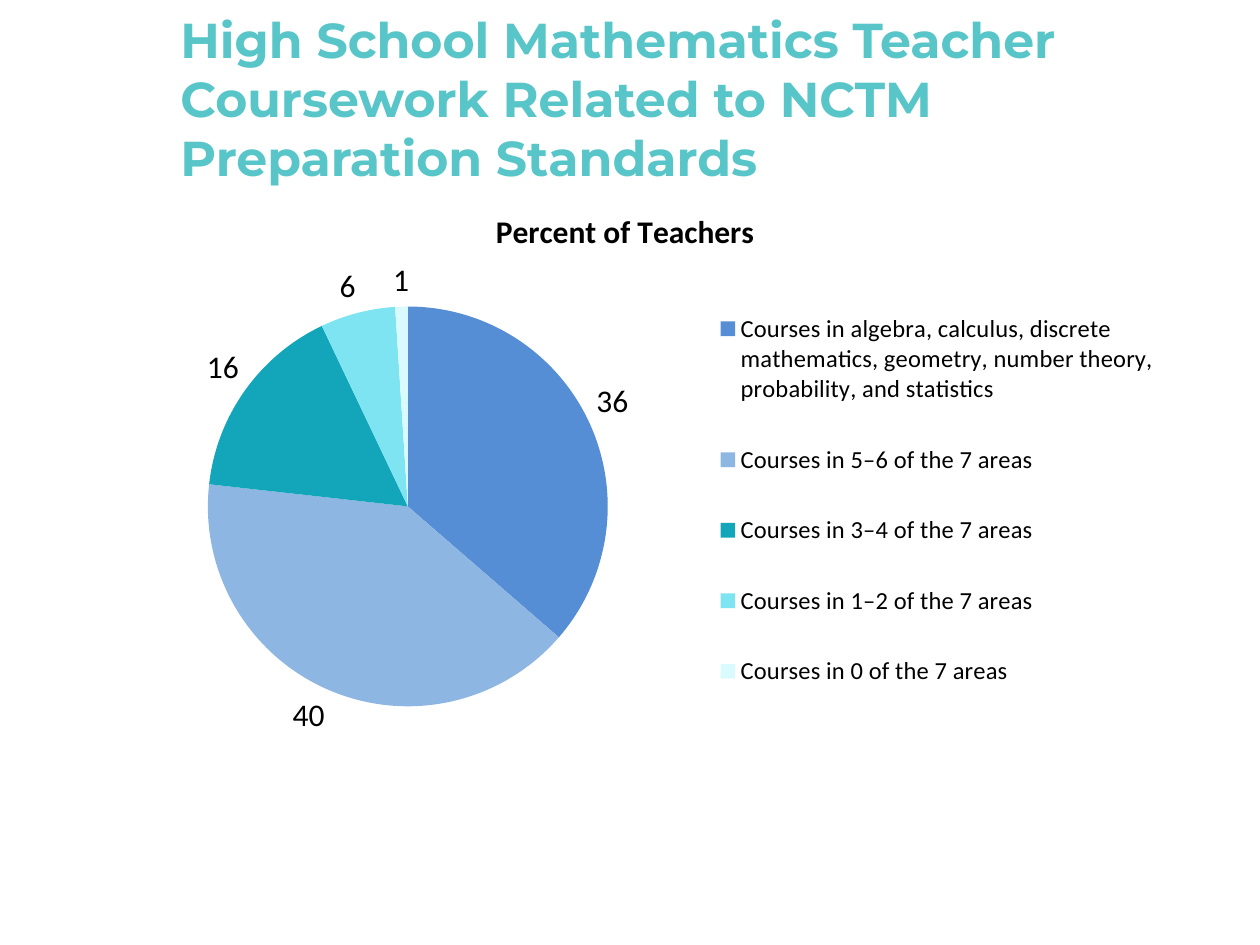
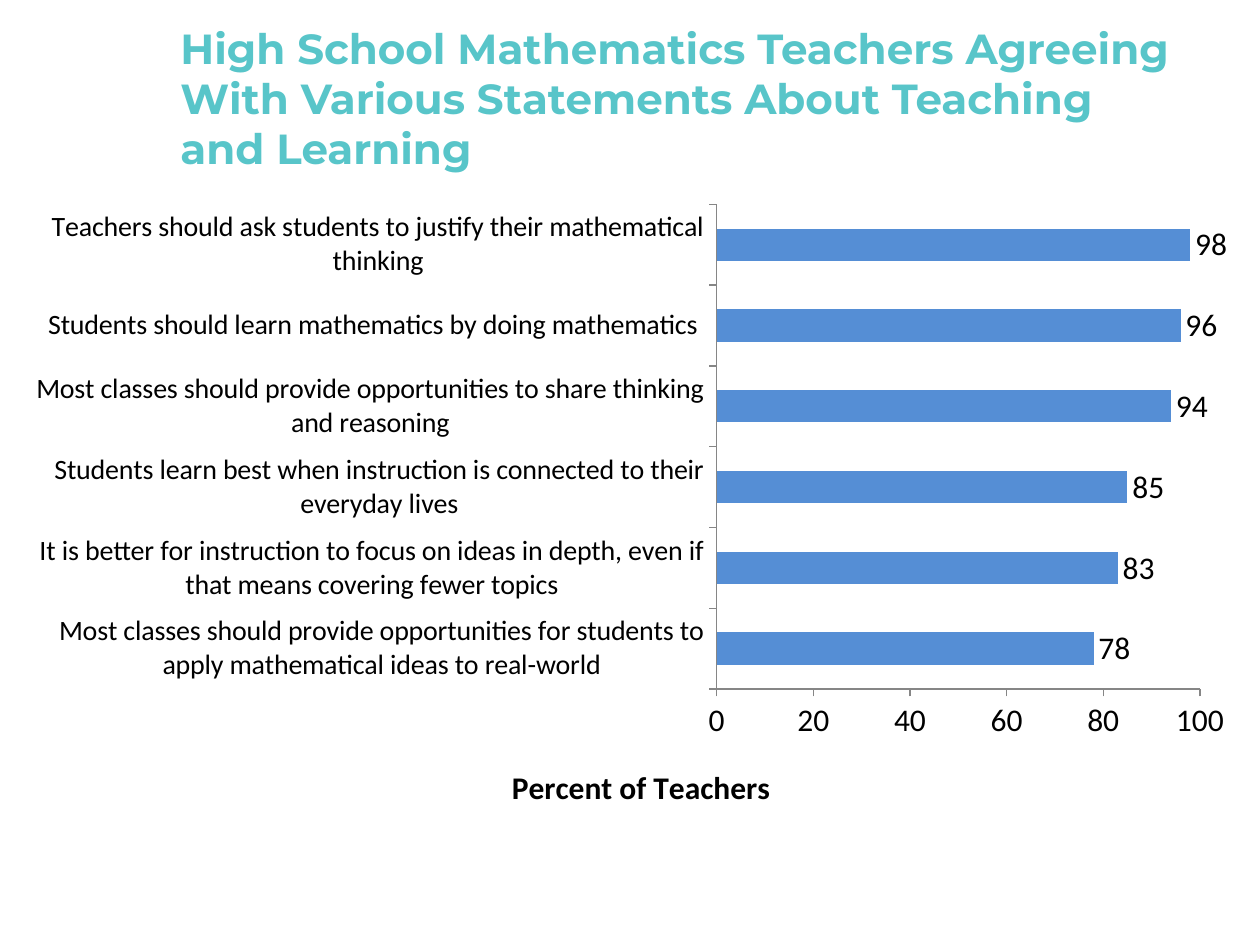
from dataclasses import dataclass

from pptx import Presentation
from pptx.chart.data import CategoryChartData
from pptx.dml.color import RGBColor
from pptx.enum import chart as charts, text
from pptx.oxml.ns import qn
from pptx.oxml.xmlchemy import OxmlElement
from pptx.util import Pt


@dataclass(frozen=True)
class Theme:
    title_font: str = "Montserrat"
    chart_font: str = "Calibri"
    title: str = "58C5C9"
    ink: str = "000000"
    axis: str = "868686"
    series: tuple = ("558ED5", "8EB6E3", "13A6BA", "7FE4F2", "D9FBFF")
    chart_size: int = 18
    category_size: int = 16
    legend_size: int = 14


def set_font(font, name, size, color, bold=False):
    font.name, font.size, font.bold = name, Pt(size), bold
    font.color.rgb = RGBColor.from_string(color)


def set_fill(fill, color):
    fill.solid()
    fill.fore_color.rgb = RGBColor.from_string(color)


def place(chart, tag, x, y, w=None, h=None):
    """Give a chart part a manual layout, in fractions of the chart."""
    part = next(chart._chartSpace.iter(qn(tag)))
    for old in part.findall(qn("c:layout")):
        part.remove(old)
    layout, manual = OxmlElement("c:layout"), OxmlElement("c:manualLayout")
    layout.append(manual)
    settings = [("xMode", "edge"), ("yMode", "edge"), ("x", x), ("y", y), ("w", w), ("h", h)]
    if tag == "c:plotArea":
        settings.insert(0, ("layoutTarget", "inner"))
    for name, value in settings:
        if value is not None:
            item = OxmlElement(f"c:{name}")
            item.set("val", str(value))
            manual.append(item)
    part.insert(0 if tag == "c:plotArea" else 1, layout)


class Deck:
    def __init__(self, theme):
        self.theme = theme
        self.prs = Presentation()
        self.prs.slide_width, self.prs.slide_height = Pt(720), Pt(540)
        self.s = None

    def slide(self, title, size):
        self.s = self.prs.slides.add_slide(self.prs.slide_layouts[6])
        tf = self.s.shapes.add_textbox(Pt(96), Pt(21.6), Pt(588), Pt(68.4)).text_frame
        tf.word_wrap = True
        tf.vertical_anchor = text.MSO_ANCHOR.MIDDLE
        tf.text = title
        set_font(tf.paragraphs[0].runs[0].font, self.theme.title_font, size, self.theme.title, True)

    def chart(self, kind, box, values):
        """Add a chart with value labels from a dict of category to value."""
        data = CategoryChartData()
        data.categories = list(values)
        data.add_series("Series 1", list(values.values()))
        chart = self.s.shapes.add_chart(kind, *map(Pt, box), data).chart
        self.chart_text(chart.font)
        chart.has_title = chart.has_legend = False
        plot = chart.plots[0]
        plot.has_data_labels = True
        labels = plot.data_labels
        labels.show_value = True
        labels.position = charts.XL_LABEL_POSITION.OUTSIDE_END
        self.chart_text(labels.font)
        return chart

    def chart_text(self, font, size=None, bold=False):
        t = self.theme
        set_font(font, t.chart_font, size or t.chart_size, t.ink, bold)

    def heading(self, chart, owner, words, x, y):
        """Title a chart or an axis at a fixed place in the chart."""
        owner.has_title = True
        title = owner.chart_title if owner is chart else owner.axis_title
        tf = title.text_frame
        tf.text = words
        self.chart_text(tf.paragraphs[0].runs[0].font, bold=True)
        place(chart, "c:title", x, y)

    def pie(self, box, values, heading):
        chart = self.chart(charts.XL_CHART_TYPE.PIE, box, values)
        self.heading(chart, chart, heading, 0.39, 0.04)
        chart.plots[0].vary_by_categories = True
        for i, color in enumerate(self.theme.series):
            set_fill(chart.series[0].points[i].format.fill, color)
        chart.has_legend = True
        chart.legend.position = charts.XL_LEGEND_POSITION.RIGHT
        chart.legend.include_in_layout = False
        self.chart_text(chart.legend.font, self.theme.legend_size)
        place(chart, "c:legend", 0.57, 0.15, 0.4, 0.72)
        place(chart, "c:plotArea", 0.15, 0.17, 0.34, 0.7)

    def bars(self, box, values, heading):
        chart = self.chart(charts.XL_CHART_TYPE.BAR_CLUSTERED, box, values)
        chart.plots[0].gap_width = 150
        chart.plots[0].vary_by_categories = False
        set_fill(chart.series[0].format.fill, self.theme.series[0])
        category, value = chart.category_axis, chart.value_axis
        for axis, size in ((category, self.theme.category_size), (value, self.theme.chart_size)):
            axis.has_major_gridlines = False
            axis.major_tick_mark = charts.XL_TICK_MARK.OUTSIDE
            axis.format.line.color.rgb = RGBColor.from_string(self.theme.axis)
            axis.format.line.width = Pt(0.75)
            self.chart_text(axis.tick_labels.font, size)
        value.minimum_scale, value.maximum_scale, value.major_unit = 0, 100, 20
        self.heading(chart, value, heading, 0.4, 0.89)
        place(chart, "c:plotArea", 0.57, 0.02, 0.39, 0.76)


def main():
    deck = Deck(Theme())
    measure = "Percent of Teachers"

    deck.slide("High School Mathematics Teacher Coursework Related to NCTM Preparation Standards", 28)
    deck.pie((18, 102.24, 672, 360), {
        "Courses in algebra, calculus, discrete mathematics, geometry, "
        "number theory, probability, and statistics": 36,
        "Courses in 5–6 of the 7 areas": 40,
        "Courses in 3–4 of the 7 areas": 16,
        "Courses in 1–2 of the 7 areas": 6,
        "Courses in 0 of the 7 areas": 1,
    }, measure)

    deck.slide("High School Mathematics Teachers Agreeing With Various Statements "
               "About Teaching and Learning", 24)
    deck.bars((6, 109.5, 708, 364.5), {
        "Most classes should provide opportunities for students to apply "
        "mathematical ideas to real-world": 78,
        "It is better for instruction to focus on ideas in depth, "
        "even if that means covering fewer topics": 83,
        "Students learn best when instruction is connected to their everyday lives": 85,
        "Most classes should provide opportunities to share thinking and reasoning": 94,
        "Students should learn mathematics by doing mathematics ": 96,
        "Teachers should ask students to justify their mathematical thinking": 98,
    }, measure)

    deck.prs.save("out.pptx")


if __name__ == "__main__":
    main()
